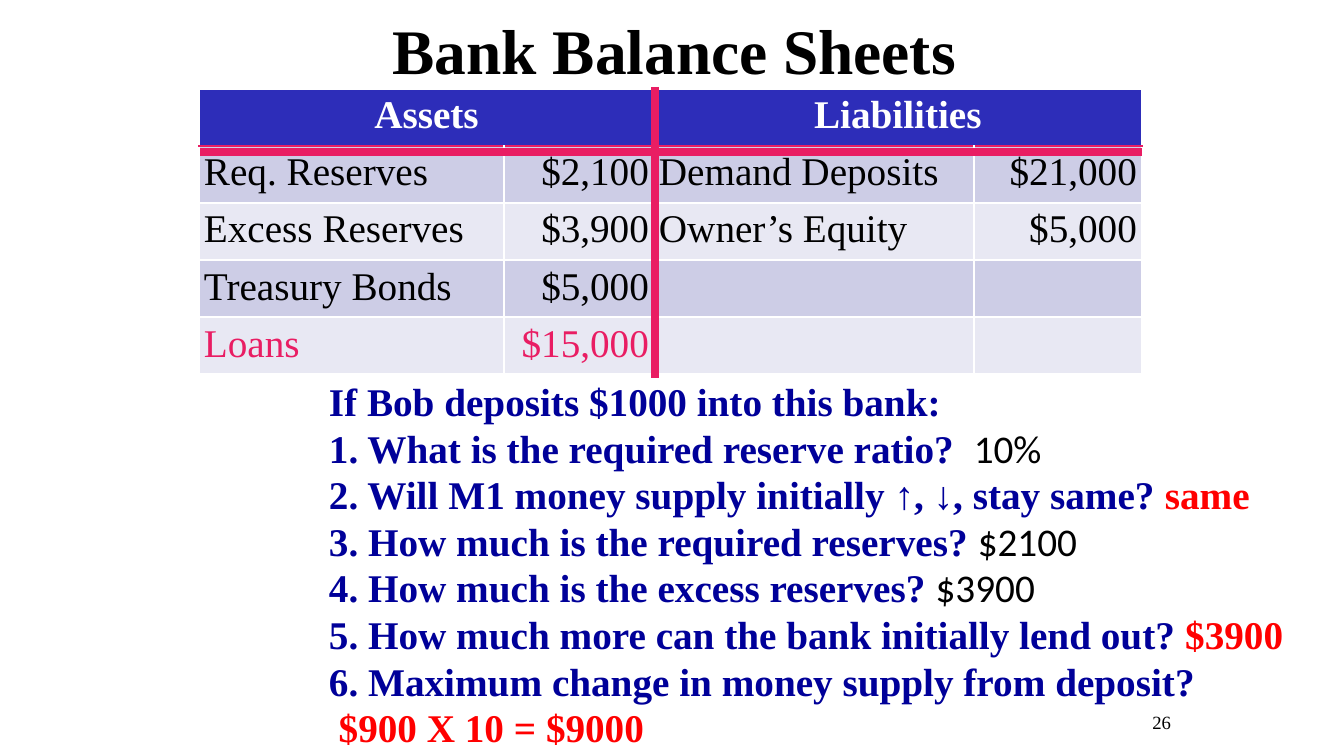
from lxml.etree import SubElement
from pptx import Presentation
from pptx.dml.color import RGBColor
from pptx.enum.shapes import MSO_CONNECTOR
from pptx.enum.text import MSO_ANCHOR, MSO_AUTO_SIZE, PP_ALIGN
from pptx.oxml import parse_xml
from pptx.oxml.ns import qn
from pptx.util import Emu, Pt

# Content
TITLE = "Bank Balance Sheets"
HEADERS = ["Assets", "Liabilities"]
ENTRIES = [
    ["Req. Reserves", "$2,100", "Demand Deposits", "$21,000"],
    ["Excess Reserves", "$3,900", "Owner’s Equity", "$5,000"],
    ["Treasury Bonds", "$5,000", "", ""],
    ["Loans", "$15,000", "", ""],
]
SCENARIO = "If Bob deposits $1000 into this bank:"
QUESTIONS = [  # question, answer, answer style
    (" What is the required reserve ratio?  ", "10%", "plain"),
    (" Will M1 money supply initially ↑, ↓, stay same? ", "same", "strong"),
    (" How much is the required reserves? ", "$2100", "plain"),
    (" How much is the excess reserves? ", "$3900", "plain"),
    (" How much more can the bank initially lend out? ", "$3900", "strong"),
    (" Maximum change in money supply from deposit?", "", "strong"),
]
CALCULATION = " $900 X 10 = $9000"
PAGE_NUMBER = "26"

# Format
SERIF = "Times New Roman"
BLACK, WHITE, NAVY, PINK = "000000", "FFFFFF", "000099", "E91D63"
HEADER_FILL, BAND_FILLS = "2D2DB9", ["CDCDE6", "E8E8F3"]
STYLES = {
    "title": {"name": SERIF, "size": Pt(34), "bold": True, "color": BLACK},
    "header": {"name": SERIF, "size": Pt(21), "bold": True, "color": WHITE},
    "entry": {"name": SERIF, "size": Pt(21), "bold": False, "color": BLACK},
    "loan": {"name": SERIF, "size": Pt(21), "bold": False, "color": PINK},
    "question": {"name": SERIF, "size": Pt(21), "bold": True, "color": NAVY},
    "strong": {"name": SERIF, "size": Pt(21), "bold": True, "color": "FF0000"},
    "plain": {"name": "Calibri", "size": Pt(21), "bold": False, "color": BLACK},
    "page": {"name": SERIF, "size": Pt(10), "bold": False, "color": BLACK},
}

# Layout in px
SLIDE_SIZE = (1344, 756)
TITLE_BOX = (196, 0, 957, 78)
QUESTION_BOX = (324, 376, 997, 391)
PAGE_BOX = (1145, 706, 31, 30)
TABLE_LEFT, TABLE_TOP, ROW_HEIGHT = 199, 89, 57
COLUMN_WIDTHS = [305, 150, 320, 168]
INSET = 5


def px(length):
    return Emu(length * 914400 * 10 // 1344)


def rgb(color):
    return RGBColor.from_string(color)


def add_run(paragraph, text, style):
    run = paragraph.add_run()
    run.text = text
    for key, value in STYLES[style].items():
        if key == "color":
            run.font.color.rgb = rgb(value)
        else:
            setattr(run.font, key, value)


def set_insets(target, top=INSET):
    insets = {"margin_left": INSET, "margin_right": INSET,
              "margin_top": top, "margin_bottom": INSET}
    for key, value in insets.items():
        setattr(target, key, px(value))


def add_text_frame(box, wrap):
    frame = slide.shapes.add_textbox(*map(px, box)).text_frame
    frame.word_wrap = wrap
    set_insets(frame)
    return frame


def add_question_line(paragraph, runs, numbered=False):
    paragraph.line_spacing = 0.95
    paragraph.space_before = Pt(1)
    if numbered:
        properties = paragraph._p.get_or_add_pPr()
        properties.set("marL", "0")
        properties.set("indent", "0")
        bullet_color = SubElement(properties, qn("a:buClr"))
        SubElement(bullet_color, qn("a:srgbClr"), val=NAVY)
        SubElement(properties, qn("a:buFont"), typeface="+mj-lt")
        SubElement(properties, qn("a:buAutoNum"), type="arabicPeriod")
    for text, style in runs:
        if text:
            add_run(paragraph, text, style)


def format_cell(cell, fill, top, bottom):
    set_insets(cell)
    cell.fill.solid()
    cell.fill.fore_color.rgb = rgb(fill)
    borders = {"L": WHITE, "R": WHITE, "T": top, "B": bottom}
    for position, (side, color) in enumerate(borders.items()):
        cell._tc.get_or_add_tcPr().insert(position, parse_xml(
            f'<a:ln{side} xmlns:a="http://schemas.openxmlformats.org/drawingml/2006/main"'
            f' w="12700"><a:solidFill><a:srgbClr val="{color}"/></a:solidFill></a:ln{side}>'))


def add_rule(x1, y1, x2, y2):
    rule = slide.shapes.add_connector(MSO_CONNECTOR.STRAIGHT, *map(px, (x1, y1, x2, y2)))
    rule.line.color.rgb = rgb(PINK)
    rule.line.width = Pt(4.5)
    SubElement(rule._element.spPr, qn("a:effectLst"))


presentation = Presentation()
presentation.slide_width, presentation.slide_height = map(px, SLIDE_SIZE)
slide = presentation.slides.add_slide(presentation.slide_layouts[5])

# Title
title = slide.shapes.title
title.left, title.top, title.width, title.height = map(px, TITLE_BOX)
heading = title.text_frame
heading.auto_size = MSO_AUTO_SIZE.NONE
heading.vertical_anchor = MSO_ANCHOR.TOP
set_insets(heading, top=11)
heading.paragraphs[0].alignment = PP_ALIGN.CENTER
add_run(heading.paragraphs[0], TITLE, "title")

# Questions with answers
questions = add_text_frame(QUESTION_BOX, True)
add_question_line(questions.paragraphs[0], [(SCENARIO, "question")])
for question, answer, answer_style in QUESTIONS:
    add_question_line(questions.add_paragraph(),
                      [(question, "question"), (answer, answer_style)], numbered=True)
add_question_line(questions.add_paragraph(), [(CALCULATION, "strong")])

# Page number
page = add_text_frame(PAGE_BOX, False).paragraphs[0]
page.alignment = PP_ALIGN.RIGHT
add_run(page, PAGE_NUMBER, "page")

# Balance sheet
row_count = len(ENTRIES) + 1
table_width, table_height = sum(COLUMN_WIDTHS), ROW_HEIGHT * row_count
sheet = slide.shapes.add_table(
    row_count, len(COLUMN_WIDTHS),
    *map(px, (TABLE_LEFT, TABLE_TOP, table_width, table_height))).table
for column, width in zip(sheet.columns, COLUMN_WIDTHS):
    column.width = px(width)
for row in sheet.rows:
    row.height = px(ROW_HEIGHT)

for index in range(len(COLUMN_WIDTHS)):
    format_cell(sheet.cell(0, index), HEADER_FILL, WHITE, PINK)
for index, header in enumerate(HEADERS):
    cell = sheet.cell(0, 2 * index)
    cell.merge(sheet.cell(0, 2 * index + 1))
    cell.text_frame.paragraphs[0].alignment = PP_ALIGN.CENTER
    add_run(cell.text_frame.paragraphs[0], header, "header")

for row_index, entry in enumerate(ENTRIES, start=1):
    style = "loan" if entry[0] == "Loans" else "entry"
    for column_index, text in enumerate(entry):
        cell = sheet.cell(row_index, column_index)
        format_cell(cell, BAND_FILLS[(row_index - 1) % 2],
                    PINK if row_index == 1 else WHITE, WHITE)
        paragraph = cell.text_frame.paragraphs[0]
        paragraph.alignment = PP_ALIGN.RIGHT if column_index % 2 else PP_ALIGN.LEFT
        if text:
            add_run(paragraph, text, style)

# T-account rules
middle = TABLE_LEFT + sum(COLUMN_WIDTHS[:2]) + 1
header_rule = TABLE_TOP + ROW_HEIGHT + 6
add_rule(middle, TABLE_TOP - 2, middle, TABLE_TOP + table_height + 4)
add_rule(TABLE_LEFT + table_width, header_rule, TABLE_LEFT + 1, header_rule)

presentation.save("out.pptx")
